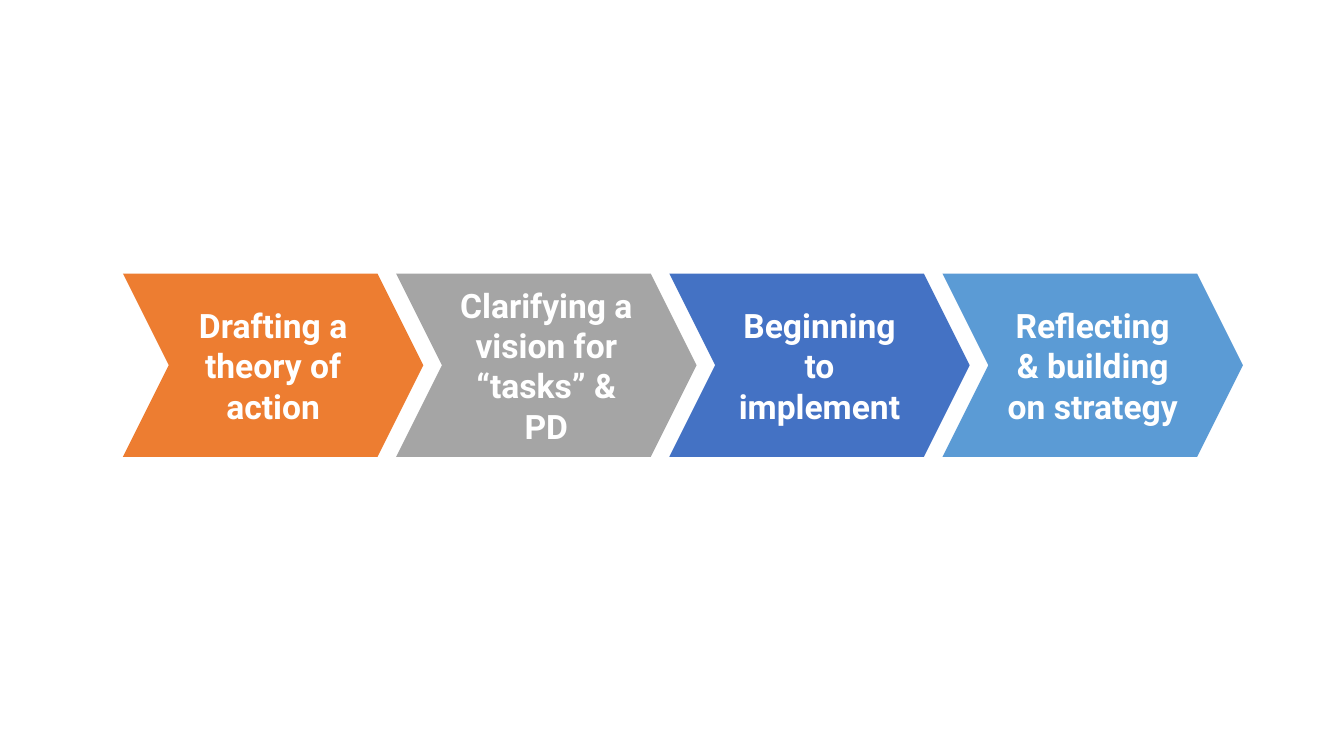
from pptx import Presentation
from pptx.dml.color import RGBColor
from pptx.enum.shapes import MSO_SHAPE as SHAPE
from pptx.enum.text import MSO_ANCHOR as ANCHOR, PP_ALIGN as ALIGN
from pptx.util import Pt

COLORS = {
    "orange": "ED7D31",
    "gray": "A5A5A5",
    "blue": "4472C4",
    "sky": "5B9BD5",
    "white": "FFFFFF",
}
FONT = "Roboto"
STEPS = [
    ("Drafting a theory of action", "orange"),
    ("Clarifying a vision for “tasks” & PD", "gray"),
    ("Beginning to implement", "blue"),
    ("Reflecting & building on strategy", "sky"),
]


def color(name):
    return RGBColor.from_string(COLORS[name])


def add_step(s, text, fill, left, top, width, height):
    sp = s.shapes.add_shape(SHAPE.CHEVRON, Pt(left), Pt(top), Pt(width), Pt(height))
    sp.adjustments[0] = 0.25
    sp.shadow.inherit = False
    sp.fill.solid()
    sp.fill.fore_color.rgb = color(fill)
    sp.line.fill.background()

    tf = sp.text_frame
    tf.word_wrap = True
    tf.vertical_anchor = ANCHOR.MIDDLE
    tf.margin_left = tf.margin_right = tf.margin_top = tf.margin_bottom = Pt(9.6)
    p = tf.paragraphs[0]
    p.text = text
    p.alignment = ALIGN.CENTER
    p.font.name = FONT
    p.font.size = Pt(24)
    p.font.bold = True
    p.font.color.rgb = color("white")


def add_process(s, left, top, width, height, step_width=214.6):
    """Spread the chevrons evenly over the box, each nested into the one before."""
    pitch = (width - step_width) / (len(STEPS) - 1)
    for i, (text, fill) in enumerate(STEPS):
        add_step(s, text, fill, left + i * pitch, top, step_width, height)


def main():
    prs = Presentation()
    prs.slide_width, prs.slide_height = Pt(960), Pt(540)
    s = prs.slides.add_slide(prs.slide_layouts[6])
    add_process(s, 87.8, 195.4, 800, 131)
    prs.save("out.pptx")


if __name__ == "__main__":
    main()
